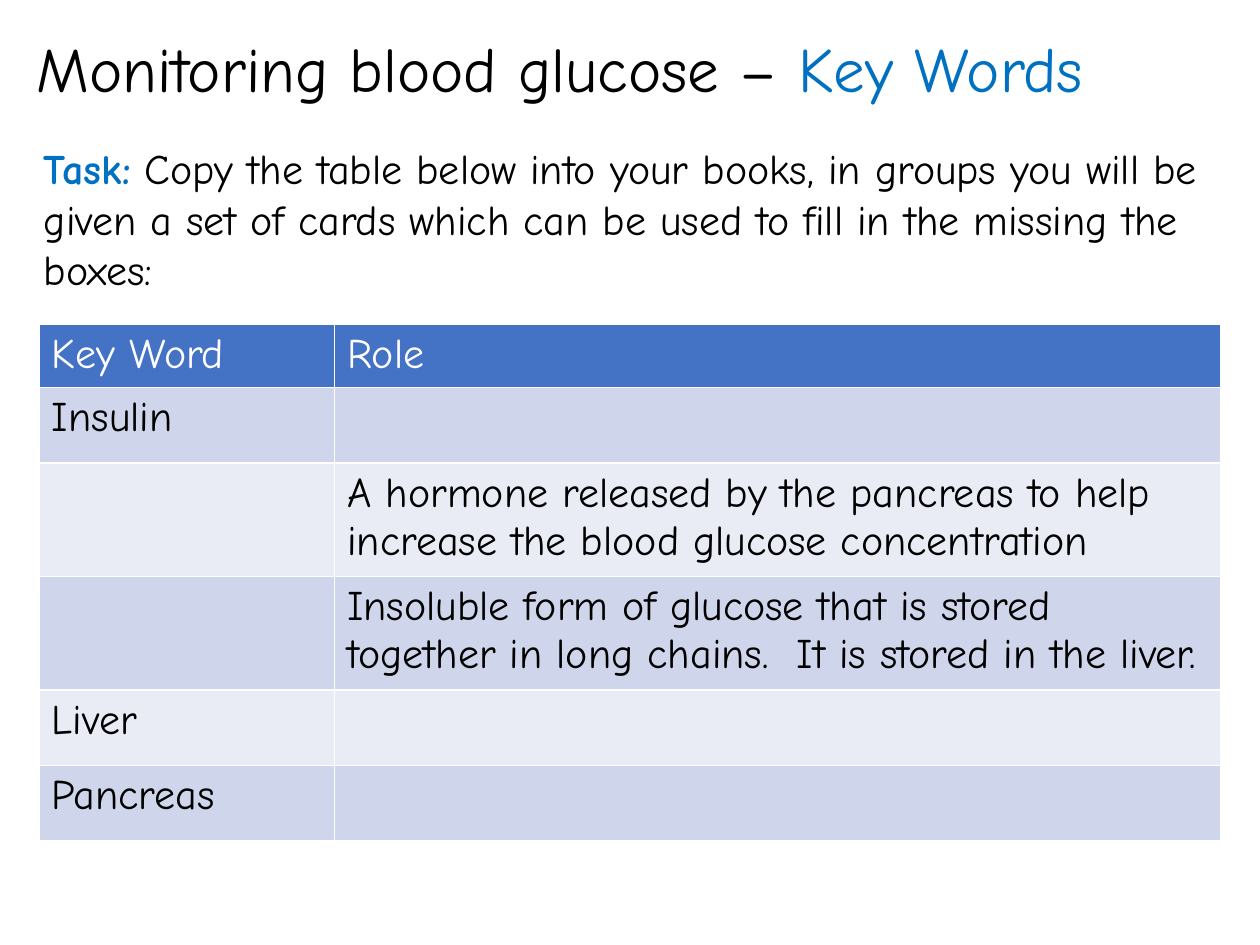
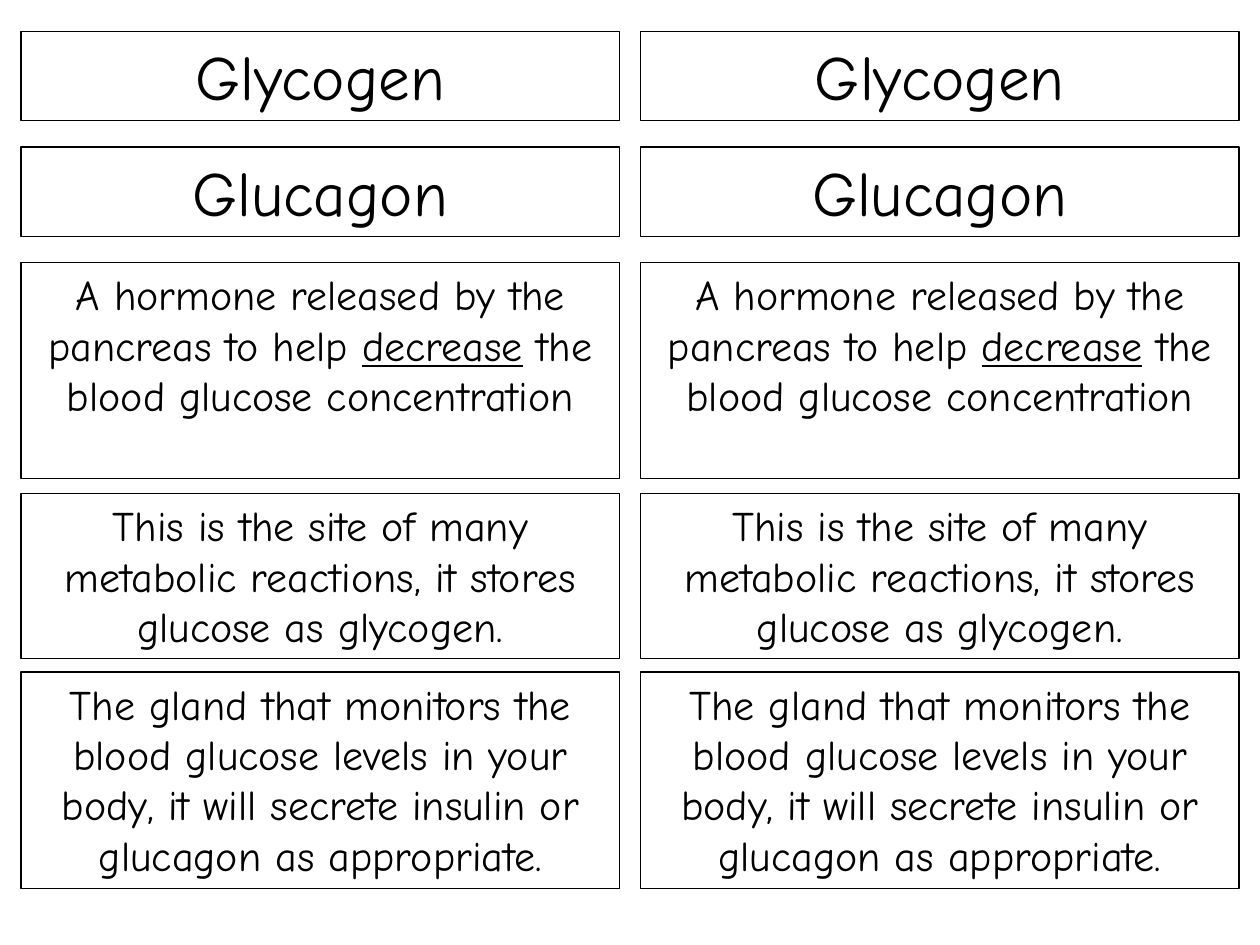
from pptx import Presentation
from pptx.dml.color import RGBColor
from pptx.enum.shapes import MSO_SHAPE
from pptx.enum.text import MSO_ANCHOR, PP_ALIGN
from pptx.util import Inches, Pt

# Shared look
FONT = "Comic Neue"
BLACK = RGBColor(0x00, 0x00, 0x00)
WHITE = RGBColor(0xFF, 0xFF, 0xFF)
ACCENT = RGBColor(0x00, 0x70, 0xC0)
HEADER_FILL = RGBColor(0x44, 0x72, 0xC4)
BAND_FILLS = (RGBColor(0xCF, 0xD5, 0xEA), RGBColor(0xE9, 0xEB, 0xF5))
HEADING_SIZE, BODY_SIZE = Pt(36), Pt(24)

# The slide is a grid of 120 columns by 90 rows
SLIDE_WIDTH, SLIDE_HEIGHT = Inches(10), Inches(7.5)
COLUMN, ROW = SLIDE_WIDTH / 120, SLIDE_HEIGHT / 90

KEY_WORDS = [
    ("Key Word", "Role"),
    ("Insulin", ""),
    ("", "A hormone released by the pancreas to help increase the blood glucose concentration"),
    ("", "Insoluble form of glucose that is stored together in long chains.  It is stored in the liver."),
    ("Liver", ""),
    ("Pancreas", ""),
]
KEY_WORD_ROWS = (5.65, 7.2, 10.35, 10.35, 7.2, 7.2)

# Each card: top row, height in rows, text size, runs of (text, format)
CARDS = [
    (3, 8.5, HEADING_SIZE, [("Glycogen", {})]),
    (14, 8.5, HEADING_SIZE, [("Glucagon", {})]),
    (25, 20.6, BODY_SIZE, [
        ("A hormone released by the pancreas to help ", {}),
        ("decrease", {"underline": True}),
        (" the blood glucose concentration", {})]),
    (47, 15.75, BODY_SIZE, [
        ("This is the site of many metabolic reactions, it stores glucose as glycogen.", {})]),
    (64, 20.6, BODY_SIZE, [
        ("The gland that monitors the blood glucose levels in your body, "
         "it will secrete insulin or glucagon as appropriate.", {})]),
]


def place(left, top, width, height):
    """Turn a box in grid units into slide lengths."""
    return (round(left * COLUMN), round(top * ROW),
            round(width * COLUMN), round(height * ROW))


def write(text_frame, runs, size, color=BLACK):
    """Fill the first paragraph with formatted runs and return it."""
    text_frame.word_wrap = True
    paragraph = text_frame.paragraphs[0]
    for text, changes in runs:
        run = paragraph.add_run()
        run.text = text
        formats = {"name": FONT, "size": size, "bold": False, "color": color, **changes}
        run.font.color.rgb = formats.pop("color")
        for name, value in formats.items():
            setattr(run.font, name, value)
    return paragraph


def add_text(slide, box, runs, size):
    text_box = slide.shapes.add_textbox(*place(*box))
    return write(text_box.text_frame, runs, size)


def add_key_word_table(slide, box, word_share):
    left, top, width, height = place(*box)
    table = slide.shapes.add_table(len(KEY_WORDS), 2, left, top, width, height).table
    word_width = round(width * word_share)
    table.columns[0].width, table.columns[1].width = word_width, width - word_width
    for index, (texts, rows) in enumerate(zip(KEY_WORDS, KEY_WORD_ROWS)):
        table.rows[index].height = round(rows * ROW)
        header = index == 0
        for cell, text in zip(table.rows[index].cells, texts):
            cell.fill.solid()
            cell.fill.fore_color.rgb = HEADER_FILL if header else BAND_FILLS[(index - 1) % 2]
            if text:
                write(cell.text_frame, [(text, {})], BODY_SIZE, WHITE if header else BLACK)


def add_card(slide, box, runs, size):
    card = slide.shapes.add_shape(MSO_SHAPE.RECTANGLE, *place(*box))
    card.shadow.inherit = False
    card.fill.background()
    card.line.color.rgb = BLACK
    card.line.width = Pt(0.75)
    card.text_frame.vertical_anchor = MSO_ANCHOR.TOP
    write(card.text_frame, runs, size).alignment = PP_ALIGN.CENTER


def add_card_column(slide, left, width):
    for top, height, size, runs in CARDS:
        add_card(slide, (left, top, width, height), runs, size)


def build_task_slide(slide):
    # Title
    title = add_text(slide, (2.3, 3, 113.8, 9.5),
                     [("Monitoring blood glucose – ", {}), ("Key Words", {"color": ACCENT})],
                     HEADING_SIZE)
    title.line_spacing = 0.9
    # Table to complete
    add_key_word_table(slide, (3.75, 30.9, 112.5, sum(KEY_WORD_ROWS)), 0.25)
    # Instructions
    add_text(slide, (3, 13, 113, 15.75),
             [("Task:", {"bold": True, "color": ACCENT}),
              (" Copy the table below into your books, in groups you will be given a set of "
               "cards which can be used to fill in the missing the boxes:", {})],
             BODY_SIZE)


def build_card_slide(slide):
    # Two identical sets of cards side by side
    for left in (2, 61):
        add_card_column(slide, left, 57)


def main():
    presentation = Presentation()
    presentation.slide_width, presentation.slide_height = SLIDE_WIDTH, SLIDE_HEIGHT
    blank = presentation.slide_layouts[6]
    for build in (build_task_slide, build_card_slide):
        build(presentation.slides.add_slide(blank))
    presentation.save("out.pptx")


if __name__ == "__main__":
    main()
